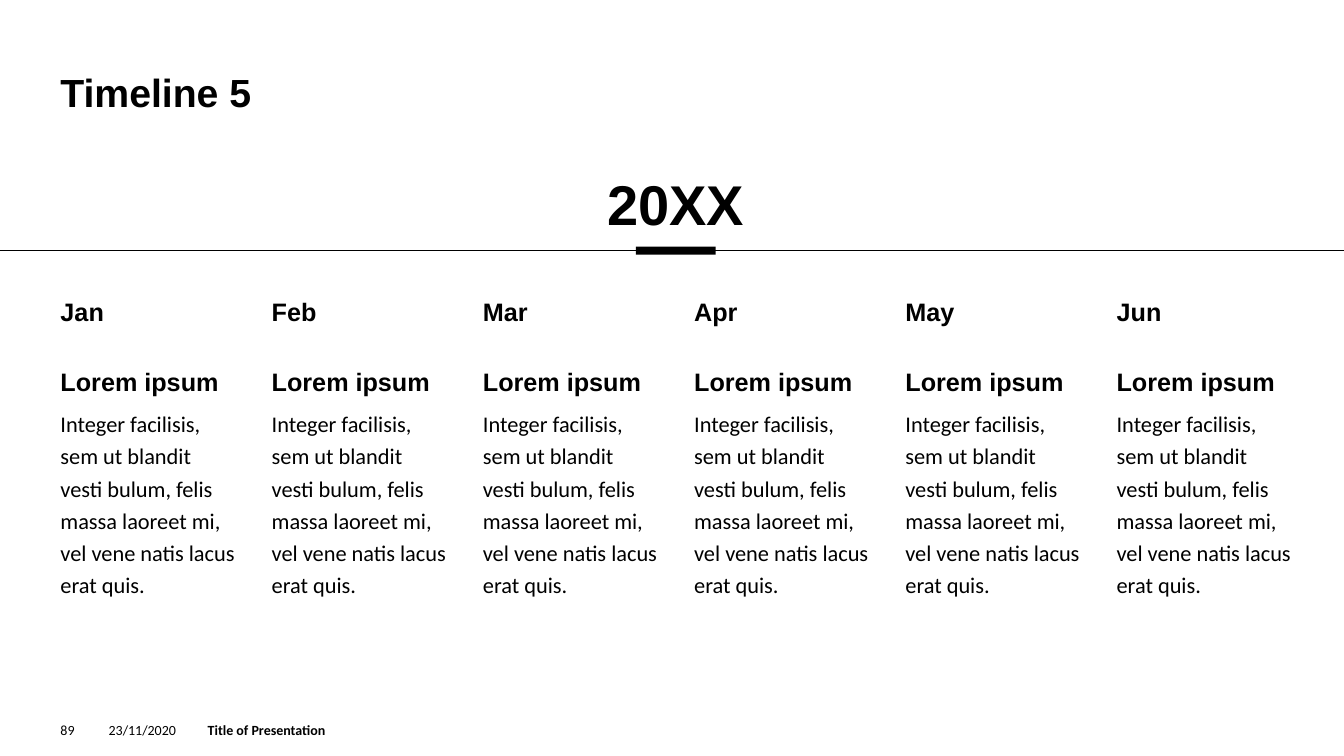
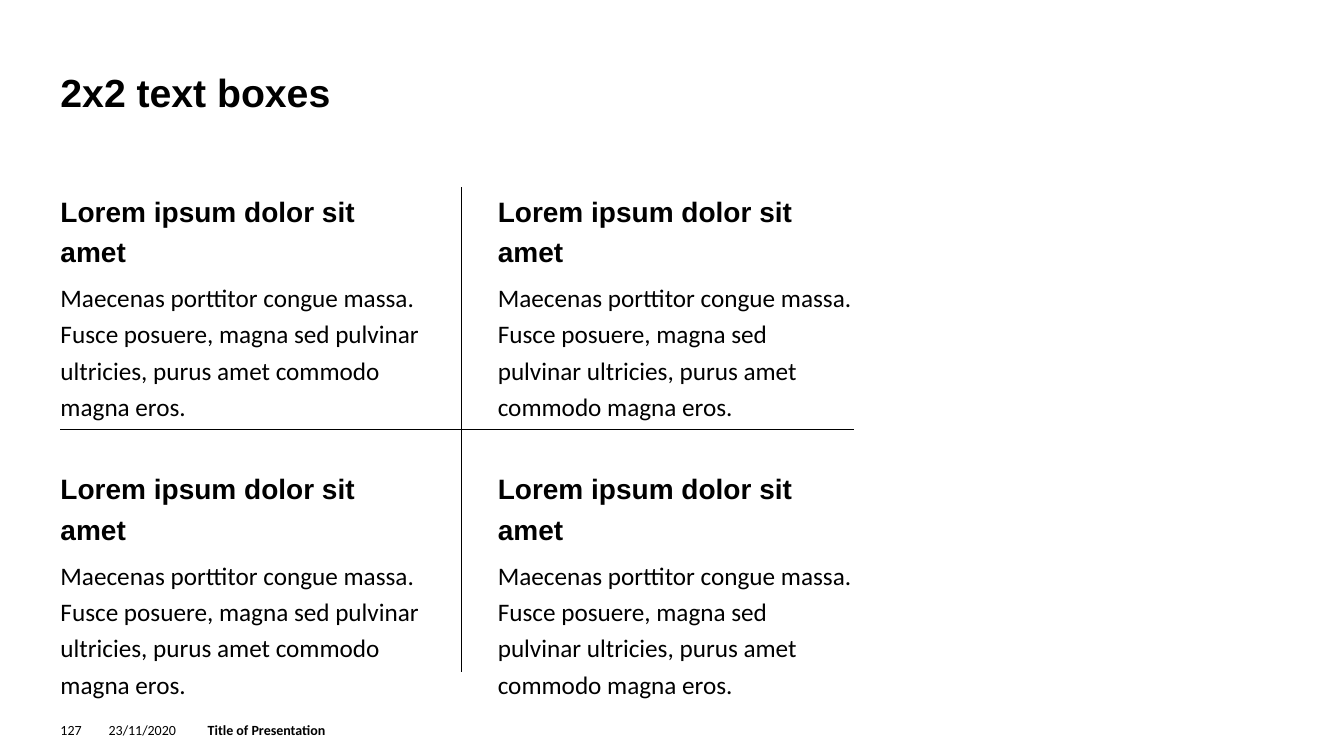
"""Build a six-month timeline slide and a 2x2 text grid slide."""
import pptx
import pptx.dml.color
import pptx.enum.shapes
import pptx.enum.text
import pptx.oxml.xmlchemy
import pptx.util

Pt = pptx.util.Pt
ANCHOR = pptx.enum.text.MSO_ANCHOR
BLACK = "000000"
HEADING_FONT, BODY_FONT = "Arial", "Calibri"
WIDTH, HEIGHT = 960, 540
LEFT, CONTENT_WIDTH = 43.2, 879.2


def add_text(slide, box, paragraphs, anchor=ANCHOR.TOP, spacing=None):
    """Add a text box; each paragraph is (text, size, font, bold, space before)."""
    frame = slide.shapes.add_textbox(*map(Pt, box)).text_frame
    frame.word_wrap = True
    frame.vertical_anchor = anchor
    frame.margin_left = frame.margin_top = frame.margin_right = frame.margin_bottom = 0
    for i, (text, size, font, bold, before) in enumerate(paragraphs):
        paragraph = frame.add_paragraph() if i else frame.paragraphs[0]
        paragraph.text = text
        paragraph.line_spacing = spacing
        paragraph.space_before = Pt(before)
        paragraph.font.size = Pt(size)
        paragraph.font.name = font
        paragraph.font.bold = bold
        paragraph.font.color.rgb = pptx.dml.color.RGBColor.from_string(BLACK)


def add_rule(slide, x1, y1, x2, y2):
    """Add a thin black line without a shadow."""
    rule = slide.shapes.add_connector(
        pptx.enum.shapes.MSO_CONNECTOR.STRAIGHT, Pt(x1), Pt(y1), Pt(x2), Pt(y2))
    rule.line.color.rgb = pptx.dml.color.RGBColor.from_string(BLACK)
    rule.line.width = Pt(0.75)
    properties = rule._element.spPr
    properties.append(pptx.oxml.xmlchemy.OxmlElement("a:effectLst"))


deck = pptx.Presentation()
deck.slide_width, deck.slide_height = Pt(WIDTH), Pt(HEIGHT)

slides = []
for title, number in (("Timeline 5", "89"), ("2x2 text boxes", "127")):
    slide = deck.slides.add_slide(deck.slide_layouts[6])
    add_text(slide, (LEFT, 49, CONTENT_WIDTH, 34), [(title, 28, HEADING_FONT, True, 0)])
    for text, x, width, bold in (
        (number, LEFT, 22.4, False),
        ("23/11/2020", 77.6, 62.6, False),
        ("Title of Presentation", 148.4, 607, True),
    ):
        add_text(slide, (x, 515.6, width, 11.6), [(text, 10, BODY_FONT, bold, 0)], ANCHOR.MIDDLE)
    slides.append(slide)
timeline, grid = slides

AXIS_Y = 179
add_rule(timeline, 0, AXIS_Y, WIDTH, AXIS_Y)

months = ("Jan", "Feb", "Mar", "Apr", "May", "Jun")
month_width = 124.8
month_step = (CONTENT_WIDTH - month_width) / (len(months) - 1)
for i, month in enumerate(months):
    add_text(timeline, (LEFT + i * month_step, 207.4, month_width, 272), [
        (month, 18, HEADING_FONT, True, 0),
        ("Lorem ipsum", 18, HEADING_FONT, True, 24),
        ("Integer facilisis, sem ut blandit vesti bulum, felis massa laoreet mi, "
         "vel vene natis lacus erat quis.", 16, BODY_FONT, False, 6),
    ], spacing=1.2)

year_width, year_height = 57, 5.8
year = timeline.shapes.add_shape(
    pptx.enum.shapes.MSO_SHAPE.RECTANGLE,
    Pt(454.2), Pt(AXIS_Y - year_height / 2), Pt(year_width), Pt(year_height))
year.shadow.inherit = False
year.fill.solid()
year.fill.fore_color.rgb = pptx.dml.color.RGBColor.from_string(BLACK)
year.line.fill.background()
label = year.text_frame
label.word_wrap = False
label.vertical_anchor = ANCHOR.BOTTOM
label.margin_left = label.margin_top = label.margin_right = 0
label.margin_bottom = Pt(20)
caption = label.paragraphs[0]
caption.text = "20XX"
caption.alignment = pptx.enum.text.PP_ALIGN.CENTER
caption.font.size = Pt(40)
caption.font.name = HEADING_FONT
caption.font.bold = True
caption.font.color.rgb = pptx.dml.color.RGBColor.from_string(BLACK)

GRID_TOP, GRID_BOTTOM, GRID_RIGHT = 133.8, 479.8, 610.2
cell_height = 147.6
for y in (GRID_TOP, GRID_BOTTOM - cell_height):
    for x, right in ((LEFT, 303.8), (355.6, GRID_RIGHT)):
        add_text(grid, (x, y, right - x, cell_height), [
            ("Lorem ipsum dolor sit amet", 20, HEADING_FONT, True, 0),
            ("Maecenas porttitor congue massa. Fusce posuere, magna sed pulvinar "
             "ultricies, purus amet commodo magna eros.", 18, BODY_FONT, False, 6),
        ], spacing=1.2)
divider_x = (303.8 + 355.6) / 2
divider_y = (GRID_TOP + GRID_BOTTOM) / 2
add_rule(grid, divider_x, GRID_TOP, divider_x, GRID_BOTTOM)
add_rule(grid, LEFT, divider_y, GRID_RIGHT, divider_y)

deck.save("out.pptx")
